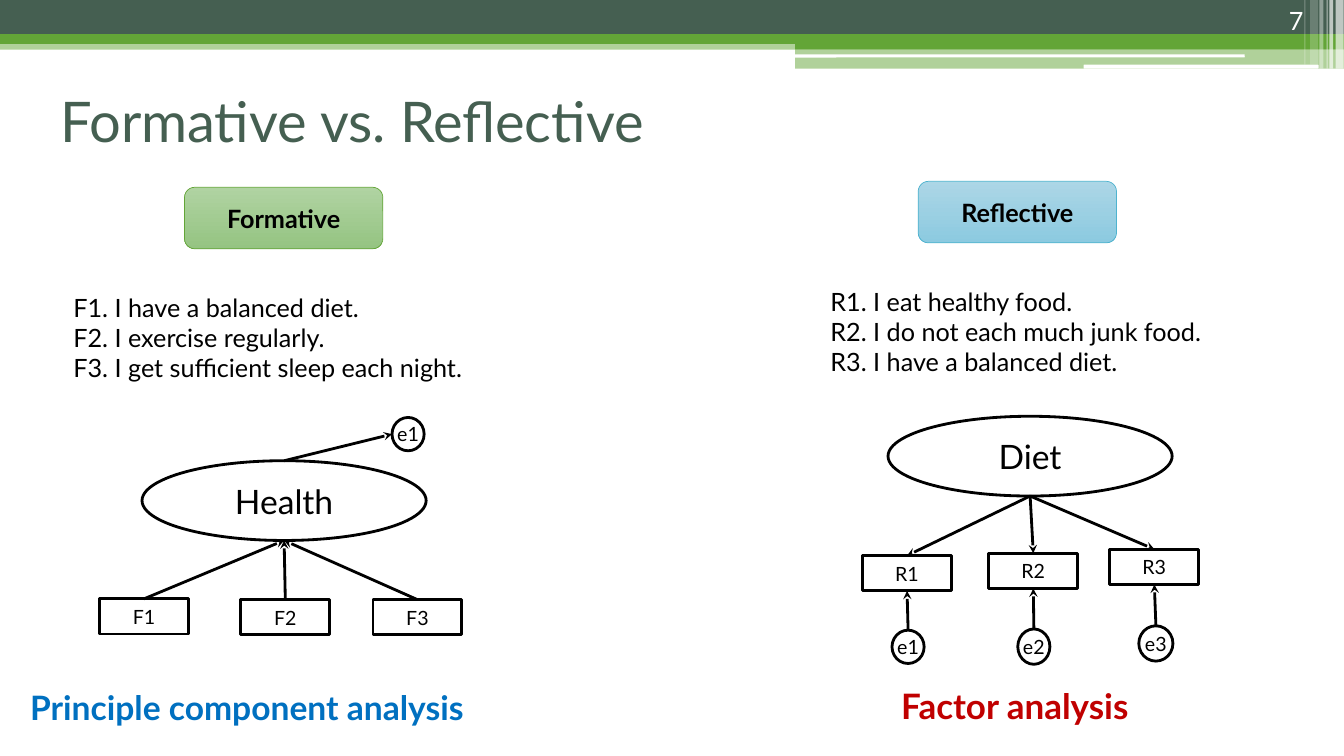
from lxml import etree
from pptx import Presentation
from pptx.dml.color import RGBColor
from pptx.enum.shapes import MSO_CONNECTOR, MSO_SHAPE as SHAPE
from pptx.enum.text import MSO_ANCHOR as ANCHOR, PP_ALIGN as ALIGN
from pptx.oxml.ns import qn
from pptx.util import Cm, Pt

BLACK = RGBColor(0x00, 0x00, 0x00)
WHITE = RGBColor(0xFF, 0xFF, 0xFF)
DARK_GREEN = RGBColor(0x45, 0x5F, 0x51)
GREEN = RGBColor(0x63, 0xA5, 0x37)
PALE_GREEN = RGBColor(0xB0, 0xD3, 0xA2)
SOFT_GREEN = RGBColor(0x95, 0xC4, 0x82)
TEAL = RGBColor(0x4E, 0xB3, 0xCF)
PALE_BLUE = RGBColor(0xAC, 0xD6, 0xE6)
SOFT_BLUE = RGBColor(0x8C, 0xCA, 0xE0)
BLUE = RGBColor(0x00, 0x70, 0xC0)
RED = RGBColor(0xC0, 0x00, 0x00)


def write(shape, text, size=18, color=BLACK, bold=False, align=ALIGN.LEFT,
          anchor=ANCHOR.MIDDLE, inset=(0.25, 0.13), wrap=True):
    """Fill a shape with text, one paragraph per line; inset is (x, y) in cm."""
    tf = shape.text_frame
    tf.word_wrap = wrap
    tf.vertical_anchor = anchor
    tf.margin_left = tf.margin_right = Cm(inset[0])
    tf.margin_top = tf.margin_bottom = Cm(inset[1])
    tf.text = text
    for p in tf.paragraphs:
        p.alignment = align
        font = p.runs[0].font
        font.name = "Lato"
        font.size = Pt(size)
        font.bold = bold
        font.color.rgb = color


def add_box(kind, box, fill=None, opacity=100, line=None, width=2):
    """Add a shape at box (left, top, width, height in cm)."""
    s = shapes.add_shape(kind, *map(Cm, box))
    s.shadow.inherit = False
    if fill is None:
        s.fill.background()
    else:
        s.fill.solid()
        s.fill.fore_color.rgb = fill
        if opacity < 100:
            rgb = s.fill._xPr.find(".//" + qn("a:srgbClr"))
            etree.SubElement(rgb, qn("a:alpha"), val=str(opacity * 1000))
    if line is None:
        s.line.fill.background()
    else:
        s.line.color.rgb = line
        s.line.width = Pt(width)
    return s


prs = Presentation()
prs.slide_width, prs.slide_height = Cm(33.87), Cm(19.05)
shapes = prs.slides.add_slide(prs.slide_layouts[6]).shapes

# Header band
for kind, box, color, opacity in [
    (SHAPE.RECTANGLE, (0, 1.02, 33.87, 0.23), GREEN, 50),
    (SHAPE.RECTANGLE, (0, 0, 33.87, 0.86), DARK_GREEN, 100),
    (SHAPE.RECTANGLE, (0, 0.86, 33.87, 0.25), GREEN, 100),
    (SHAPE.RECTANGLE, (20.04, 0.99, 13.83, 0.25), GREEN, 100),
    (SHAPE.RECTANGLE, (20.04, 1.22, 13.83, 0.51), GREEN, 50),
    (SHAPE.ROUNDED_RECTANGLE, (20.02, 1.37, 11.35, 0.08), WHITE, 100),
    (SHAPE.ROUNDED_RECTANGLE, (27.31, 1.63, 5.92, 0.1), WHITE, 100),
]:
    add_box(kind, box, color, opacity)

for left, width, height, opacity in [
    (33.66, 0.2, 1.73, 65), (33.5, 0.1, 1.73, 65), (33.43, 0.03, 1.73, 60),
    (33.25, 0.1, 1.73, 40), (33.02, 0.2, 1.63, 20), (32.87, 0.03, 1.63, 30),
]:
    add_box(SHAPE.RECTANGLE, (left, 0, width, height), WHITE, opacity)

# Free text
for box, text, style in [
    ((1.27, 1.98, 30.48, 2.11), "Formative vs. Reflective",
     dict(size=40, color=DARK_GREEN)),
    ((30.28, 0, 2.82, 1.02), "7",
     dict(color=WHITE, align=ALIGN.RIGHT, anchor=ANCHOR.BOTTOM)),
    ((1.7, 7.21, 10.92, 2.59),
     "F1. I have a balanced diet.\nF2. I exercise regularly.\n"
     "F3. I get sufficient sleep each night.", dict(inset=(0.15, 0.15))),
    ((20.78, 7.06, 10.92, 2.59),
     "R1. I eat healthy food.\nR2. I do not each much junk food.\n"
     "R3. I have a balanced diet.", dict(inset=(0.15, 0.15))),
    ((0.51, 17.17, 13.36, 1.27), "Principle component analysis",
     dict(size=24, color=BLUE, bold=True, anchor=ANCHOR.TOP)),
    ((22.63, 17.17, 6.81, 1.22), "Factor analysis",
     dict(size=25, color=RED, bold=True, inset=(0.08, 0.08), wrap=False)),
]:
    write(shapes.add_textbox(*map(Cm, box)), text, **style)

# Column headings
for label, left, top, edge, stops in [
    ("Formative", 4.65, 4.72, GREEN, (PALE_GREEN, SOFT_GREEN)),
    ("Reflective", 23.14, 4.57, TEAL, (PALE_BLUE, SOFT_BLUE)),
]:
    s = add_box(SHAPE.ROUNDED_RECTANGLE, (left, top, 5, 1.55), line=edge, width=0.5)
    s.fill.gradient()
    s.fill.gradient_angle = 270
    for stop, color in zip(s.fill.gradient_stops, stops):
        stop.color.rgb = color
    write(s, label, bold=True, align=ALIGN.CENTER)

# Path diagrams: construct, indicators, error terms, then arrows between them
SIDES = {"top": (0.5, 0), "bottom": (0.5, 1), "left": (0, 0.5)}
DIAGRAMS = [
    (("Health", 3.58, 11.61),
     [("F1", 2.51, 15.09), ("F2", 6.07, 15.11), ("F3", 9.4, 15.11)],
     [("e1", 9.88, 10.52, 0.81, 0.84)],
     [(f, "top", "Health", "bottom") for f in ("F1", "F2", "F3")]
     + [("Health", "top", "e1", "left")]),
    (("Diet", 22.38, 10.49),
     [("R1", 21.74, 14), ("R2", 24.92, 13.94), ("R3", 27.97, 13.84)],
     [("e1", 22.48, 15.88, 0.81, 0.84), ("e2", 25.65, 15.85, 0.81, 0.89),
      ("e3", 28.7, 15.77, 0.86, 0.89)],
     [("Diet", "bottom", r, "top") for r in ("R1", "R2", "R3")]
     + [(f"e{i}", "top", f"R{i}", "bottom") for i in (1, 2, 3)]),
]
for construct, indicators, errors, arrows in DIAGRAMS:
    nodes = {}
    for kind, size, inset, items in [
        (SHAPE.OVAL, 24, 0, [(*construct, 7.16, 2.01)]),
        (SHAPE.RECTANGLE, 14, 0.15, [(*item, 2.24, 0.89) for item in indicators]),
        (SHAPE.OVAL, 14, 0, errors),
    ]:
        for label, *box in items:
            nodes[label] = s = add_box(kind, box, line=BLACK)
            write(s, label, size=size, align=ALIGN.CENTER, inset=(inset, inset))

    for start, start_side, end, end_side in arrows:
        ends = []
        for name, side in ((start, start_side), (end, end_side)):
            s, (fx, fy) = nodes[name], SIDES[side]
            ends += [int(s.left + fx * s.width), int(s.top + fy * s.height)]
        arrow = shapes.add_connector(MSO_CONNECTOR.STRAIGHT, *ends)
        arrow.line.color.rgb = BLACK
        arrow.line.width = Pt(2)
        etree.SubElement(arrow.line._get_or_add_ln(), qn("a:tailEnd"), type="stealth")
        etree.SubElement(arrow._element.spPr, qn("a:effectLst"))

prs.save("out.pptx")
